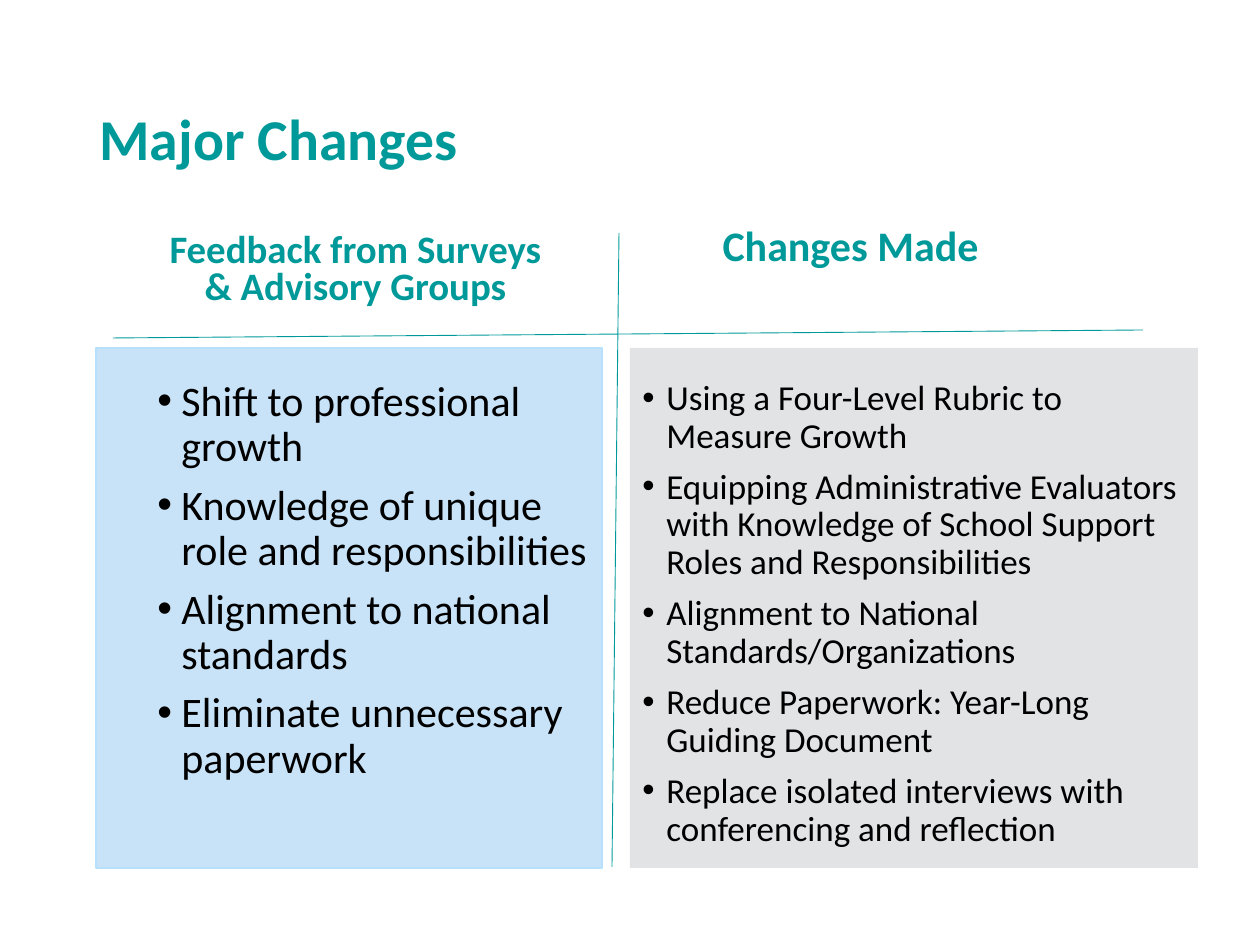
"""Build the Major Changes slide: survey feedback beside the changes made."""
from lxml import etree
from pptx import Presentation, util as u
from pptx.dml.color import RGBColor
from pptx.enum import shapes, text
from pptx.oxml.ns import qn

TEAL = RGBColor(0x00, 0x99, 0x9A)
BLACK = RGBColor(0x00, 0x00, 0x00)
PALE_BLUE = RGBColor(0xC8, 0xE3, 0xF7)
BLUE_EDGE = RGBColor(0xB7, 0xE0, 0xFF)
PALE_GREY = RGBColor(0xE1, 0xE3, 0xE5)
EMU_PER_PX = 914400 / 126

FEEDBACK = [
    "Shift to professional growth",
    "Knowledge of unique role and responsibilities",
    "Alignment to national standards",
    "Eliminate unnecessary paperwork",
]
CHANGES = [
    "Using a Four-Level Rubric to Measure Growth",
    "Equipping Administrative Evaluators with Knowledge of School Support Roles and Responsibilities",
    "Alignment to National Standards/Organizations",
    "Reduce Paperwork: Year-Long Guiding Document",
    "Replace isolated interviews with conferencing and reflection",
]


def px(*lengths):
    return [u.Emu(round(n * EMU_PER_PX)) for n in lengths]


def apply(target, values):
    for name, value in values.items():
        setattr(target, name, value)


class Deck:
    def __init__(self, width, height):
        self.prs = Presentation()
        self.prs.slide_width, self.prs.slide_height = px(width, height)
        self.s = self.prs.slides.add_slide(self.prs.slide_layouts[6])

    def panel(self, box, fill, edge=None):
        sp = self.s.shapes.add_shape(shapes.MSO_SHAPE.RECTANGLE, *px(*box))
        sp.shadow.inherit = False
        sp.fill.solid()
        sp.fill.fore_color.rgb = fill
        if edge is None:
            sp.line.fill.background()
        else:
            sp.line.color.rgb = edge
            sp.line.width = u.Pt(1)

    def rule(self, start, end):
        line = self.s.shapes.add_connector(shapes.MSO_CONNECTOR.STRAIGHT, *px(*start, *end))
        line.line.color.rgb = TEAL
        line.line.width = u.Pt(0.5)
        etree.SubElement(line._element.spPr, qn("a:effectLst"))

    def text_box(self, box, lines, font, para, anchor=text.MSO_ANCHOR.TOP, bullet=False):
        tf = self.s.shapes.add_textbox(*px(*box)).text_frame
        apply(tf, {"word_wrap": True, "vertical_anchor": anchor})
        for i, line in enumerate(lines):
            p = tf.add_paragraph() if i else tf.paragraphs[0]
            apply(p, {"space_before": u.Pt(7.5), **para})
            if bullet:
                self.bullet(p)
            r = p.add_run()
            r.text = line
            apply(r.font, {"name": "Calibri", "size": u.Pt(font["size"]), "bold": font["bold"]})
            r.font.color.rgb = font["color"]

    def bullet(self, p):
        pPr = p._p.get_or_add_pPr()
        indent = px(24)[0]
        pPr.set("marL", str(indent))
        pPr.set("indent", str(-indent))
        etree.SubElement(pPr, qn("a:buFont")).set("typeface", "Arial")
        etree.SubElement(pPr, qn("a:buChar")).set("char", "•")

    def heading(self, box, line, size, spacing=0.9, align=text.PP_ALIGN.CENTER,
                anchor=text.MSO_ANCHOR.BOTTOM):
        font = {"size": size, "bold": True, "color": TEAL}
        self.text_box(box, [line], font, {"line_spacing": spacing, "alignment": align}, anchor)

    def bullets(self, box, lines, size):
        font = {"size": size, "bold": False, "color": BLACK}
        self.text_box(box, lines, font, {"line_spacing": 0.9}, bullet=True)


def main():
    deck = Deck(1260, 945)
    deck.heading((87, 50, 1086, 183), "Major Changes", 33,
                 align=text.PP_ALIGN.LEFT, anchor=text.MSO_ANCHOR.MIDDLE)
    deck.heading((145, 226, 421, 88), "Feedback from Surveys & Advisory Groups", 22.2, 0.8)
    deck.heading((640, 189, 421, 88), "Changes Made", 24)
    deck.rule((113, 338), (1143, 330))
    deck.rule((619, 233), (612, 867))
    deck.panel((96, 348, 506, 520), PALE_BLUE, BLUE_EDGE)
    deck.panel((630, 348, 568, 520), PALE_GREY)
    deck.bullets((145, 374, 471, 395), FEEDBACK, 24)
    deck.bullets((630, 374, 568, 395), CHANGES, 20)
    deck.prs.save("out.pptx")


if __name__ == "__main__":
    main()
